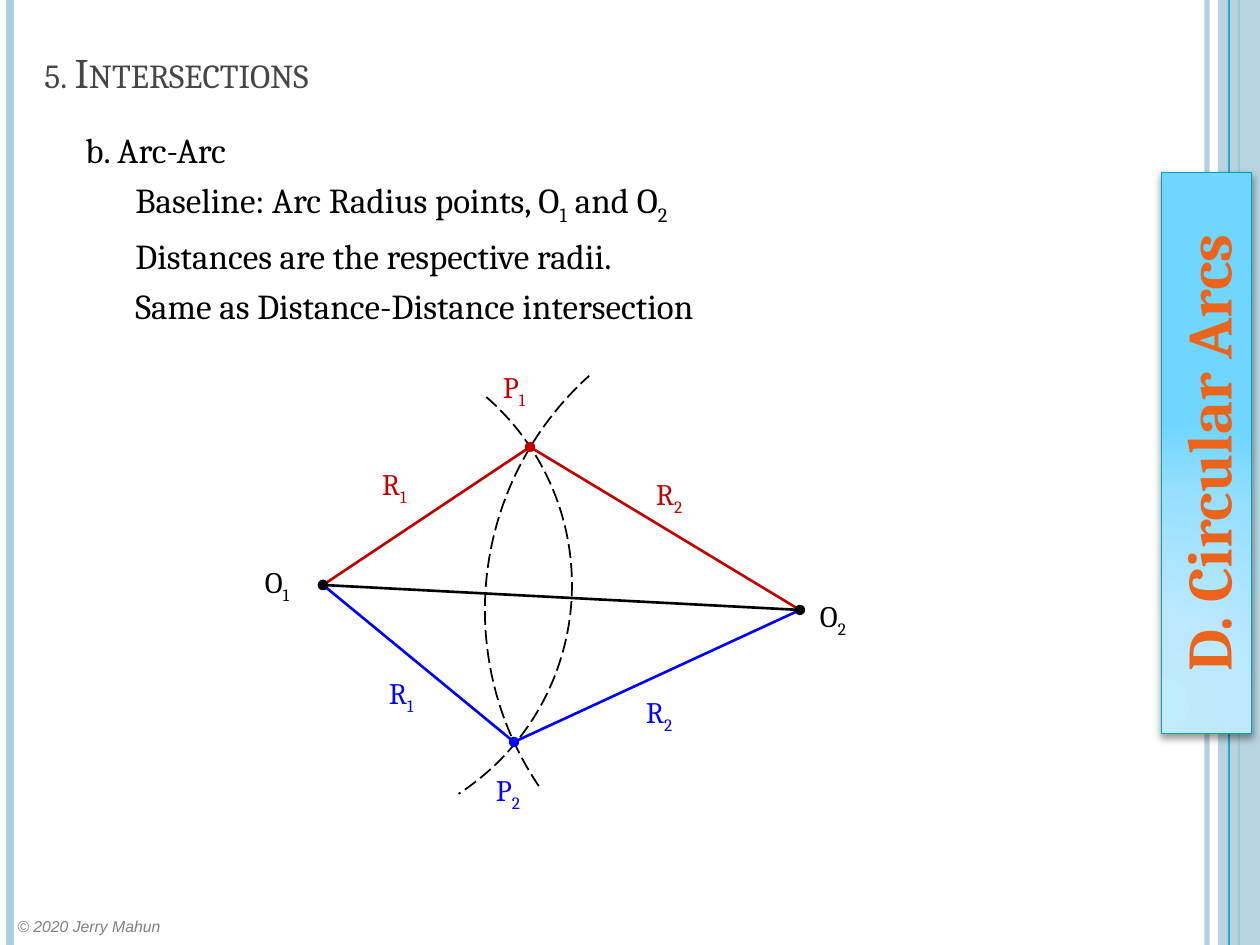
from dataclasses import dataclass

from lxml import etree
from pptx import Presentation
from pptx.dml.color import RGBColor
from pptx.enum.dml import MSO_LINE
from pptx.enum.shapes import MSO_CONNECTOR, MSO_SHAPE
from pptx.enum.text import MSO_ANCHOR, MSO_AUTO_SIZE, PP_ALIGN
from pptx.oxml import parse_xml
from pptx.oxml.ns import nsdecls, qn
from pptx.util import Pt

STRAIGHT = MSO_CONNECTOR.STRAIGHT
RECT, ARC = MSO_SHAPE.RECTANGLE, MSO_SHAPE.ARC
DASH = MSO_LINE.LONG_DASH
TOP, MIDDLE, BOTTOM = MSO_ANCHOR.TOP, MSO_ANCHOR.MIDDLE, MSO_ANCHOR.BOTTOM
LEFT, CENTER = PP_ALIGN.LEFT, PP_ALIGN.CENTER
GROW = MSO_AUTO_SIZE.SHAPE_TO_FIT_TEXT
SCALE = 914400 / 126
WIDE, HIGH = 1260, 945


@dataclass(frozen=True)
class Theme:
    serif: str = "Cambria"
    sans: str = "Arial"
    black: str = "000000"
    red: str = "C00000"
    blue: str = "0000FF"
    pale: str = "ADCEDC"
    teal: str = "2DA2BF"
    edge: str = "079EC3"
    orange: str = "EB641B"
    dark: str = "464646"
    grey: str = "808080"
    glow: tuple = ((0, "C2EBFD"), (30, "BCE9FE"), (75, "96DFFE"), (100, "70D6FF"))
    banner: int = 36
    title: int = 24
    body: int = 20
    label: int = 17
    foot: int = 9


@dataclass(frozen=True)
class Style:
    size: int
    color: str
    font: str
    bold: bool = False
    ital: bool = False
    caps: bool = False


@dataclass(frozen=True)
class Bar:
    x: int
    color: str
    width: float
    alpha: int = 100


@dataclass(frozen=True)
class Leg:
    start: tuple
    end: tuple
    color: str
    tail: bool = False


@dataclass(frozen=True)
class Curve:
    mid: tuple
    radius: int
    start: int
    end: int


@dataclass(frozen=True)
class Label:
    name: str
    sub: str
    x: int
    y: int
    color: str


T = Theme()
O1, O2, P1, P2 = (323, 585), (800, 610), (530, 447), (514, 742)

BARS = [Bar(1207, T.pale, 3, 93), Bar(10, T.pale, 4.5), Bar(1239, T.teal, 1.5)]
EDGE = Bar(1229, T.teal, 0.75)
CURVES = [Curve(O1, 249, 311, 57), Curve(O2, 315, 146, 228)]
LEGS = [
    Leg(O1, P1, T.red), Leg(P1, O2, T.red),
    Leg(O1, P2, T.blue), Leg(P2, O2, T.blue),
    Leg(O2, O1, T.black, True),
]
LABELS = [
    Label("O", "1", 265, 564, T.black), Label("O", "2", 820, 598, T.black),
    Label("P", "1", 503, 369, T.red), Label("P", "2", 496, 772, T.blue),
    Label("R", "1", 382, 466, T.red), Label("R", "2", 656, 476, T.red),
    Label("R", "1", 389, 675, T.blue), Label("R", "2", 646, 694, T.blue),
]
# Odd pieces of each line are subscripts
LINES = [
    ["b. Arc-Arc"],
    ["Baseline: Arc Radius points, O", "1", " and O", "2"],
    ["Distances are the respective radii."],
    ["Same as Distance-Distance intersection"],
]


def px(*nums: int) -> list[int]:
    return [round(n * SCALE) for n in nums]


def rgb(color: str) -> RGBColor:
    return RGBColor.from_string(color)


def fade(part, alpha: int) -> None:
    tint = next(part.iter(qn("a:srgbClr")))
    etree.SubElement(tint, qn("a:alpha")).set("val", str(alpha * 1000))


def write(para, parts: list[str], style: Style) -> None:
    for i, part in enumerate(parts):
        run = para.add_run()
        run.text = part
        font = run.font
        font.name, font.size = style.font, Pt(style.size)
        font.bold, font.italic = style.bold, style.ital
        font.color.rgb = rgb(style.color)
        props = run._r.get_or_add_rPr()
        if style.caps:
            props.set("cap", "small")
        if i % 2:
            props.set("baseline", "-25000")


def add_text(shapes, box: tuple, parts: list[str], style: Style,
             anchor=TOP, wrap: bool = True, inset: bool = True):
    frame = shapes.add_textbox(*px(*box)).text_frame
    frame.word_wrap, frame.vertical_anchor = wrap, anchor
    if not inset:
        frame.margin_left = frame.margin_right = 0
        frame.margin_top = frame.margin_bottom = 0
        frame.auto_size = GROW
    write(frame.paragraphs[0], parts, style)
    return frame


def add_line(shapes, start: tuple, end: tuple, color: str, width: float):
    line = shapes.add_connector(STRAIGHT, *px(*start, *end))
    line.line.color.rgb, line.line.width = rgb(color), Pt(width)
    etree.SubElement(line._element.spPr, qn("a:effectLst"))
    return line


def add_bar(shapes, bar: Bar) -> None:
    line = add_line(shapes, (bar.x, 0), (bar.x, HIGH), bar.color, bar.width)
    if bar.alpha < 100:
        fade(line._element.spPr, bar.alpha)


def add_leg(shapes, leg: Leg) -> None:
    line = add_line(shapes, leg.start, leg.end, leg.color, 1.5)
    for tag in ["a:headEnd", "a:tailEnd"][:1 + leg.tail]:
        etree.SubElement(line.line._get_or_add_ln(), qn(tag)).set("type", "oval")


def add_curve(shapes, curve: Curve) -> None:
    (x, y), r = curve.mid, curve.radius
    arc = shapes.add_shape(ARC, *px(x - r, y - r, 2 * r, 2 * r))
    # Sixty thousandths of a degree, held as parts of 100000
    arc.adjustments[0], arc.adjustments[1] = curve.start * 0.6, curve.end * 0.6
    arc.fill.background()
    arc.line.color.rgb, arc.line.width = rgb(T.black), Pt(1)
    arc.line.dash_style = DASH
    arc.shadow.inherit = False


def add_banner(shapes) -> None:
    box = shapes.add_shape(RECT, *px(926, 408, 561, 90))
    box.rotation = 270
    box.line.color.rgb, box.line.width = rgb(T.edge), Pt(1)
    stops = "".join(f'<a:gs pos="{pos * 1000}"><a:srgbClr val="{color}"/></a:gs>'
                    for pos, color in T.glow)
    props = box._element.spPr
    props.find(qn("a:prstGeom")).addnext(parse_xml(
        f'<a:gradFill {nsdecls("a")} rotWithShape="1"><a:gsLst>{stops}</a:gsLst>'
        '<a:path path="circle"><a:fillToRect l="5000" t="100000" r="120000" '
        'b="10000"/></a:path></a:gradFill>'))
    props.append(parse_xml(
        f'<a:effectLst {nsdecls("a")}><a:outerShdw blurRad="50800" dist="25400" '
        'dir="5400000" rotWithShape="0"><a:srgbClr val="000000">'
        '<a:alpha val="40000"/></a:srgbClr></a:outerShdw></a:effectLst>'))
    frame = box.text_frame
    frame.word_wrap, frame.vertical_anchor = False, MIDDLE
    para = frame.paragraphs[0]
    para.alignment = CENTER
    write(para, ["D. Circular Arcs"], Style(T.banner, T.orange, T.serif, bold=True))


def main() -> None:
    deck = Presentation()
    deck.slide_width, deck.slide_height = px(WIDE, HIGH)
    shapes = deck.slides.add_slide(deck.slide_layouts[6]).shapes

    # Side bars
    for bar in BARS:
        add_bar(shapes, bar)
    band = shapes.add_shape(RECT, *px(1218, 0, 42, HIGH))
    band.fill.solid()
    band.fill.fore_color.rgb = rgb(T.pale)
    fade(band._element.spPr, 87)
    band.line.fill.background()
    band.shadow.inherit = False
    add_bar(shapes, EDGE)

    # Footer and banner
    add_text(shapes, (5, 911, 181, 32), ["© 2020 Jerry Mahun"],
             Style(T.foot, T.grey, T.sans, ital=True))
    add_banner(shapes)

    # Arc diagram
    group = shapes.add_group_shape().shapes
    for curve in CURVES:
        add_curve(group, curve)
    for leg in LEGS:
        add_leg(group, leg)
    for tag in LABELS:
        add_text(group, (tag.x, tag.y, 40, 43), [tag.name, tag.sub],
                 Style(T.label, tag.color, T.serif), wrap=False, inset=False)

    # Title and body
    add_text(shapes, (32, 38, 1061, 65), ["5. Intersections"],
             Style(T.title, T.dark, T.serif, caps=True), BOTTOM)
    style = Style(T.body, T.black, T.serif)
    frame = add_text(shapes, (73, 122, 1018, 770), LINES[0], style)
    frame.paragraphs[0].space_before = Pt(6)
    for parts in LINES[1:]:
        para = frame.add_paragraph()
        para.level, para.alignment, para.space_before = 1, LEFT, Pt(4.7)
        para._p.get_or_add_pPr().set("marL", str(px(50)[0]))
        write(para, parts, style)

    deck.save("out.pptx")


if __name__ == "__main__":
    main()
